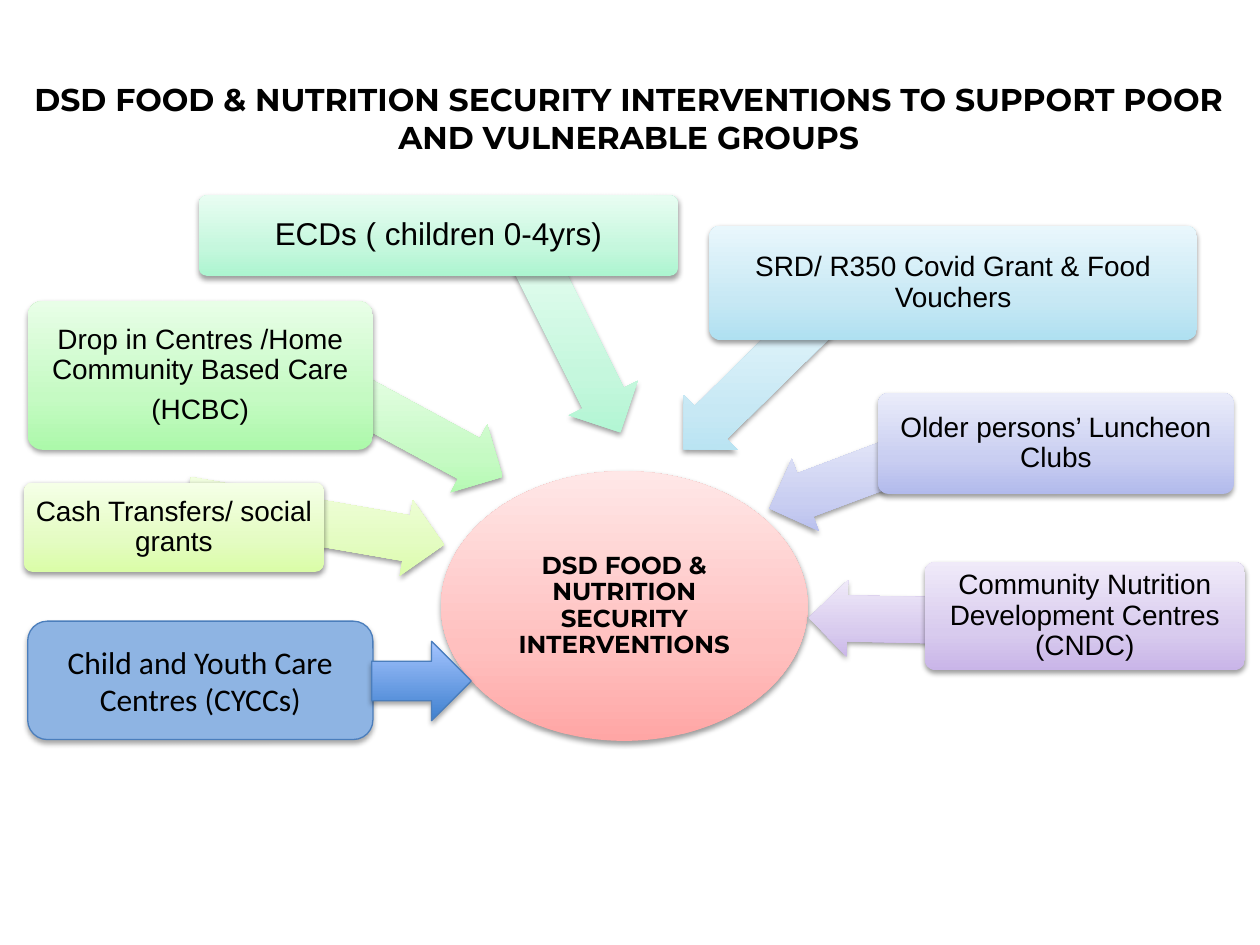
from lxml import etree
from pptx import Presentation
from pptx.dml.color import RGBColor
from pptx.enum.shapes import MSO_SHAPE
from pptx.enum.text import MSO_ANCHOR, PP_ALIGN
from pptx.oxml import parse_xml
from pptx.oxml.ns import qn
from pptx.util import Inches, Pt

NS = 'xmlns:a="http://schemas.openxmlformats.org/drawingml/2006/main"'
ARROW_HEIGHT = 0.61
BORDER = "4B7EBC"

# text, size, box, arrow (left, top, width, rotation), gradient from bottom to top
INTERVENTIONS = [
    (["Cash Transfers/ social grants"], 16, (0.19, 3.83, 2.38, 0.71),
     (1.47, 3.84, 2.07, 189.9), ("DAFDA7", "E4FCC2", "F5FFE7")),
    (["Drop in Centres /Home Community Based Care", "(HCBC)"], 16, (0.22, 2.39, 2.74, 1.18),
     (2.73, 3.16, 1.34, 208.4), ("ACF9AA", "C5FAC3", "E8FEE7")),
    (["ECDs ( children 0-4yrs)"], 18, (1.58, 1.55, 3.8, 0.64),
     (3.78, 2.42, 1.58, 243.4), ("ACF5D0", "C5F7DD", "E8FDF2")),
    (["SRD/ R350 Covid Grant & Food Vouchers"], 16, (5.63, 1.79, 3.87, 0.91),
     (5.21, 2.74, 1.49, 315.5), ("AFE0F1", "C7E8F4", "E9F7FC")),
    (["Older persons’ Luncheon Clubs"], 16, (6.97, 3.12, 2.82, 0.8),
     (6.07, 3.53, 1.14, 339.4), ("B2BAEC", "C9CEF1", "EAECFA")),
    (["Community Nutrition Development Centres (CNDC)"], 16, (7.34, 4.46, 2.54, 0.86),
     (6.42, 4.61, 1.28, 1.2), ("C9B5E8", "D8CBEE", "F0EAF9")),
]


def rgb(color):
    return RGBColor.from_string(color)


def set_gradient(sp, colors):
    """Upright gradient, first colour at the bottom."""
    positions = (0, 35, 100) if len(colors) == 3 else (0, 100)
    stops = "".join(f'<a:gs pos="{pos * 1000}"><a:srgbClr val="{c}"/></a:gs>'
                    for pos, c in zip(positions, colors))
    grad = parse_xml(f'<a:gradFill {NS} rotWithShape="0"><a:gsLst>{stops}</a:gsLst>'
                     '<a:lin ang="16200000" scaled="0"/></a:gradFill>')
    sp.fill.background()
    no_fill = sp._element.spPr.find(qn("a:noFill"))
    sp._element.spPr.replace(no_fill, grad)


def set_shadow(sp, distance, opacity):
    sp.shadow.inherit = False
    effects = sp._element.spPr.find(qn("a:effectLst"))
    shadow = etree.SubElement(effects, qn("a:outerShdw"), blurRad=str(Pt(3.1)),
                              dist=str(Pt(distance)), dir="5400000", rotWithShape="0")
    color = etree.SubElement(shadow, qn("a:srgbClr"), val="000000")
    etree.SubElement(color, qn("a:alpha"), val=str(opacity * 1000))


def add_shape(s, kind, box, colors, line=None, rotation=0, adjustments=()):
    sp = s.shapes.add_shape(kind, *map(Inches, box))
    sp.rotation = rotation
    for i, value in enumerate(adjustments):
        sp.adjustments[i] = value
    if len(colors) == 1:
        sp.fill.solid()
        sp.fill.fore_color.rgb = rgb(colors[0])
    else:
        set_gradient(sp, colors)
    if line:
        sp.line.color.rgb = rgb(line)
        sp.line.width = Pt(0.75)
        set_shadow(sp, 1.8, 35)
    else:
        sp.line.fill.background()
        set_shadow(sp, 1.6, 38)
    return sp


def write(sp, paragraphs, size, font="Arial", bold=False, spacing=None, after=None, inset=None):
    tf = sp.text_frame
    tf.word_wrap = True
    tf.vertical_anchor = MSO_ANCHOR.MIDDLE
    if inset is not None:
        tf.margin_left = tf.margin_right = tf.margin_top = tf.margin_bottom = Inches(inset)
    for i, text in enumerate(paragraphs):
        p = tf.add_paragraph() if i else tf.paragraphs[0]
        p.alignment = PP_ALIGN.CENTER
        if spacing:
            p.line_spacing = spacing
        if after:
            p.space_after = Pt(after)
        r = p.add_run()
        r.text = text
        r.font.size = Pt(size)
        r.font.name = font
        r.font.bold = bold
        r.font.color.rgb = rgb("000000")


def add_title(s, box, text):
    title = s.shapes.title
    title.left, title.top, title.width, title.height = map(Inches, box)
    write(title, [text], 18, font="Montserrat", bold=True)


def add_hub(s, box):
    sp = add_shape(s, MSO_SHAPE.OVAL, box, ("FFA6A5", "FFC0BF", "FFE7E7"))
    write(sp, ["DSD FOOD & NUTRITION SECURITY INTERVENTIONS"], 14, font="Montserrat",
          bold=True, spacing=0.9, after=5, inset=0.01)


def add_intervention(s, box, paragraphs, size, arrow, colors):
    left, top, width, rotation = arrow
    add_shape(s, MSO_SHAPE.LEFT_ARROW, (left, top, width, ARROW_HEIGHT), colors,
              rotation=rotation, adjustments=(0.6, 0.5))
    sp = add_shape(s, MSO_SHAPE.ROUNDED_RECTANGLE, box, colors, adjustments=(0.1,))
    write(sp, paragraphs, size, spacing=0.9, after=round(size * 0.35, 1), inset=0.03)


def add_care_centres(s, box):
    left, top, width, height = box
    sp = add_shape(s, MSO_SHAPE.ROUNDED_RECTANGLE, box, ("8EB4E3",), line=BORDER)
    write(sp, ["Child and Youth Care Centres (CYCCs)"], 18, font="Calibri")
    arrow_box = (left + width - 0.01, top + 0.16, 0.79, height - 0.31)
    add_shape(s, MSO_SHAPE.RIGHT_ARROW, arrow_box, ("3F80CE", "A4C4FF"), line=BORDER)


def main():
    prs = Presentation()
    prs.slide_width, prs.slide_height = Inches(10), Inches(7.5)
    s = prs.slides.add_slide(prs.slide_layouts[5])

    add_title(s, (0, 0.52, 9.98, 0.83),
              "DSD FOOD & NUTRITION SECURITY INTERVENTIONS TO SUPPORT POOR "
              "AND VULNERABLE GROUPS")
    # Central ellipse, then the interventions pointing at it
    add_hub(s, (3.5, 3.74, 2.91, 2.14))
    for paragraphs, size, box, arrow, colors in INTERVENTIONS:
        add_intervention(s, box, paragraphs, size, arrow, colors)
    add_care_centres(s, (0.22, 4.93, 2.74, 0.94))

    prs.save("out.pptx")


if __name__ == "__main__":
    main()
